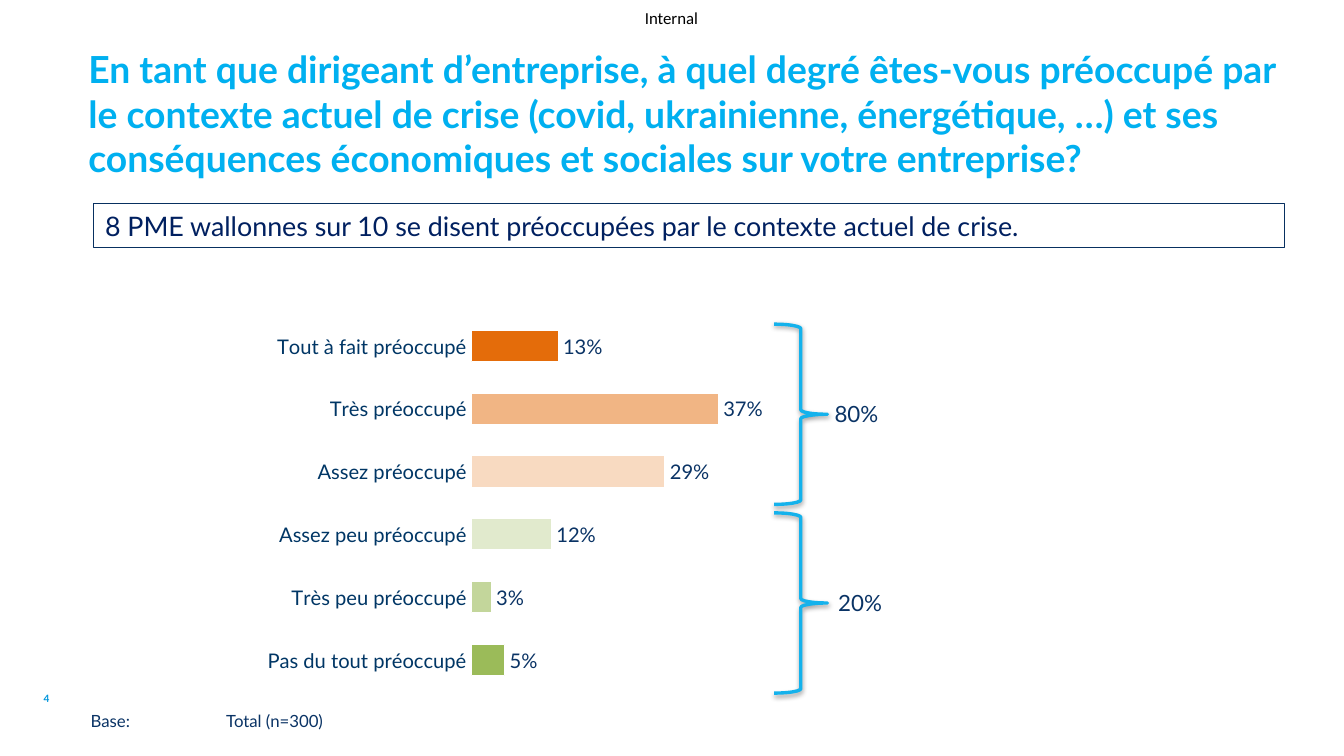
from lxml.etree import SubElement
from pptx import Presentation
from pptx.chart.data import CategoryChartData
from pptx.dml.color import RGBColor
from pptx.enum.chart import XL_CHART_TYPE, XL_LABEL_POSITION, XL_TICK_LABEL_POSITION, XL_TICK_MARK
from pptx.enum.shapes import MSO_SHAPE
from pptx.enum.text import MSO_ANCHOR, MSO_AUTO_SIZE, PP_ALIGN
from pptx.oxml import parse_xml
from pptx.oxml.ns import nsdecls, qn
from pptx.util import Inches, Pt

BLACK = RGBColor(0x00, 0x00, 0x00)
WHITE = RGBColor(0xFF, 0xFF, 0xFF)
SKY = RGBColor(0x00, 0xB0, 0xF0)
BRACE_BLUE = RGBColor(0x14, 0xB2, 0xEC)
NUMBER_BLUE = RGBColor(0x00, 0x96, 0xDC)
FRAME_BLUE = RGBColor(0x08, 0x30, 0x60)
MESSAGE_BLUE = RGBColor(0x00, 0x20, 0x60)
LABEL_BLUE = RGBColor(0x0A, 0x33, 0x65)
AXIS_BLUE = RGBColor(0x00, 0x36, 0x65)
CHART_BLUE = RGBColor(0x0D, 0x2A, 0x50)
DARK_ORANGE = RGBColor(0xE4, 0x6C, 0x0A)
ORANGE = RGBColor(0xF1, 0xB5, 0x84)
PALE_ORANGE = RGBColor(0xF8, 0xDA, 0xC1)
PALE_GREEN = RGBColor(0xE1, 0xEA, 0xCD)
GREEN = RGBColor(0xC3, 0xD6, 0x9B)
DARK_GREEN = RGBColor(0x9B, 0xBB, 0x59)

TITLE = ("En tant que dirigeant d’entreprise, à quel degré êtes-vous préoccupé par le contexte "
         "actuel de crise (covid, ukrainienne, énergétique, …) et ses conséquences économiques "
         "et sociales sur votre entreprise?")
MESSAGE = "8 PME wallonnes sur 10 se disent préoccupées par le contexte actuel de crise."
ANSWERS = [
    ("Tout à fait préoccupé", 13, DARK_ORANGE),
    ("Très préoccupé", 37, ORANGE),
    ("Assez préoccupé", 29, PALE_ORANGE),
    ("Assez peu préoccupé", 12, PALE_GREEN),
    ("Très peu préoccupé", 3, GREEN),
    ("Pas du tout préoccupé", 5, DARK_GREEN),
]
# total, brace top, label left
TOTALS = [("80%", 2.68, 6.8), ("20%", 4.24, 6.83)]
BRACE_HEIGHT = 1.49
LABEL_HEIGHT = 0.33
PLOT = {"x": 0.367, "y": 0.098, "w": 0.52, "h": 0.898}


def style_font(font, size, color, name="Lato", bold=False):
    font.name, font.size, font.bold = name, Pt(size), bold
    font.color.rgb = color


def write(shape, text, size, color, name="Lato", bold=False, align=PP_ALIGN.LEFT,
          anchor=MSO_ANCHOR.TOP, inset=True):
    frame = shape.text_frame
    frame.text = text
    frame.word_wrap = True
    frame.auto_size = MSO_AUTO_SIZE.NONE
    frame.vertical_anchor = anchor
    if not inset:
        frame.margin_left = frame.margin_right = frame.margin_top = frame.margin_bottom = 0
    para = frame.paragraphs[0]
    para.alignment = align
    style_font(para.runs[0].font, size, color, name, bold)
    return para


def add_text(page, place, *args, **options):
    box = page.shapes.add_textbox(*map(Inches, place))
    return write(box, *args, **options)


def add_brace(page, top):
    brace = page.shapes.add_shape(MSO_SHAPE.RIGHT_BRACE, Inches(6.4), Inches(top),
                                  Inches(0.44), Inches(BRACE_HEIGHT))
    brace.fill.background()
    brace.line.color.rgb = BRACE_BLUE
    brace.line.width = Pt(2)
    brace.element.spPr.append(parse_xml(
        f'<a:effectLst {nsdecls("a")}><a:outerShdw blurRad="{Pt(3.1)}" dist="{Pt(1.6)}" '
        'dir="5400000" rotWithShape="0"><a:srgbClr val="000000"><a:alpha val="38000"/>'
        '</a:srgbClr></a:outerShdw></a:effectLst>'))


def fix_plot_area(chart):
    """Pin the inner plot area to the fractions in PLOT."""
    plot_area = chart.element.find(".//" + qn("c:plotArea"))
    layout = plot_area.find(qn("c:layout"))
    if layout is None:
        layout = parse_xml(f'<c:layout {nsdecls("c")}/>')
        plot_area.insert(0, layout)
    manual = SubElement(layout, qn("c:manualLayout"))
    settings = [("layoutTarget", "inner"), ("xMode", "edge"), ("yMode", "edge"), *PLOT.items()]
    for tag, value in settings:
        SubElement(manual, qn("c:" + tag)).set("val", str(value))


def add_answer_chart(page):
    data = CategoryChartData()
    data.categories = [answer for answer, _, _ in ANSWERS]
    data.add_series("Series 1", [share for _, share, _ in ANSWERS])
    chart = page.shapes.add_chart(XL_CHART_TYPE.BAR_CLUSTERED, Inches(0), Inches(2.26),
                                  Inches(10.62), Inches(3.47), data).chart
    chart.has_legend = False
    chart.has_title = False
    style_font(chart.font, 14, CHART_BLUE)

    answers_axis = chart.category_axis
    answers_axis.reverse_order = True
    answers_axis.major_tick_mark = XL_TICK_MARK.NONE
    answers_axis.format.line.fill.background()
    style_font(answers_axis.tick_labels.font, 12, AXIS_BLUE)

    share_axis = chart.value_axis
    share_axis.minimum_scale, share_axis.maximum_scale = 0, 100
    share_axis.has_major_gridlines = False
    share_axis.tick_label_position = XL_TICK_LABEL_POSITION.NONE
    share_axis.visible = False

    plot = chart.plots[0]
    plot.gap_width = 100
    plot.vary_by_categories = False
    bars = plot.series[0]
    for index, (_, _, color) in enumerate(ANSWERS):
        bar = bars.points[index].format
        bar.fill.solid()
        bar.fill.fore_color.rgb = color
        bar.line.color.rgb = WHITE
        bar.line.width = Pt(0.75)
    labels = bars.data_labels
    labels.show_value = True
    labels.position = XL_LABEL_POSITION.OUTSIDE_END
    labels.number_format = '0"%"'
    labels.number_format_is_linked = False
    style_font(labels.font, 12, LABEL_BLUE)
    fix_plot_area(chart)


def main():
    deck = Presentation()
    deck.slide_width, deck.slide_height = Inches(11.11), Inches(6.25)
    page = deck.slides.add_slide(deck.slide_layouts[5])

    title = page.shapes.title
    title.left, title.top = Inches(0.63), Inches(0.33)
    title.width, title.height = Inches(10.3), Inches(0.66)
    write(title, TITLE, 22.2, SKY, bold=True)

    add_text(page, (5.18, 0, 0.74, 0.29), "Internal", 10, BLACK, name="Calibri",
             align=PP_ALIGN.CENTER, anchor=MSO_ANCHOR.MIDDLE, inset=False)
    add_text(page, (0, 5.61, 0.77, 0.33), "4", 6, NUMBER_BLUE, bold=True,
             align=PP_ALIGN.CENTER, anchor=MSO_ANCHOR.MIDDLE)

    message = page.shapes.add_shape(MSO_SHAPE.RECTANGLE, Inches(0.77), Inches(1.68),
                                    Inches(9.85), Inches(0.37))
    message.shadow.inherit = False
    message.fill.background()
    message.line.color.rgb = FRAME_BLUE
    message.line.width = Pt(0.75)
    write(message, MESSAGE, 16, MESSAGE_BLUE, anchor=MSO_ANCHOR.MIDDLE)

    add_answer_chart(page)
    for total, top, left in TOTALS:
        add_brace(page, top)
        label_top = top + (BRACE_HEIGHT - LABEL_HEIGHT) / 2
        add_text(page, (left, label_top, 1.12, LABEL_HEIGHT), total, 13.3, LABEL_BLUE)

    base = add_text(page, (0.75, 5.92, 8.58, 0.21), "Base:\tTotal (n=300)", 10, LABEL_BLUE,
                    inset=False)
    base.line_spacing = Pt(8.9)
    tabs = SubElement(base._p.get_or_add_pPr(), qn("a:tabLst"))
    SubElement(tabs, qn("a:tab"), pos=str(Inches(1.12)), algn="l")

    deck.save("out.pptx")


if __name__ == "__main__":
    main()
